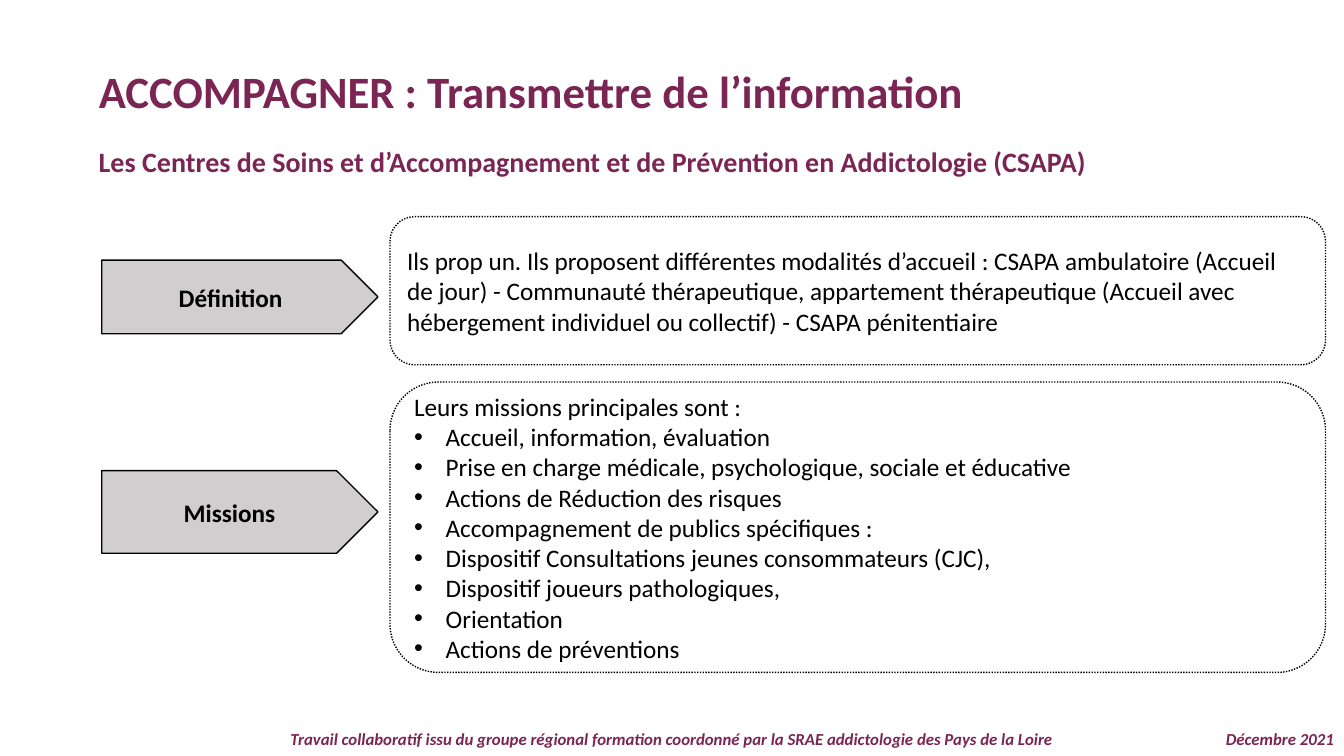
from lxml.etree import SubElement
from pptx import Presentation
from pptx.dml.color import RGBColor
from pptx.enum.dml import MSO_LINE
from pptx.enum.shapes import MSO_SHAPE
from pptx.enum.text import MSO_ANCHOR, PP_ALIGN
from pptx.oxml.ns import qn
from pptx.util import Pt

# Content
COLORS = {"plum": "7A2553", "grey": "D0CECE", "black": "000000"}
TITLE = "ACCOMPAGNER : Transmettre de l’information"
SUBTITLE = "Les Centres de Soins et d’Accompagnement et de Prévention en Addictologie (CSAPA)"
CREDIT = ("Travail collaboratif issu du groupe régional formation coordonné "
          "par la SRAE addictologie des Pays de la Loire")
DATE = "Décembre 2021"
# Each section: label, label top and height, panel top and height, intro, bullets
SECTIONS = [
    ("Définition", 185.8, 52.6, 154.8, 105.8,
     "Ils prop un. Ils proposent différentes modalités d’accueil : CSAPA ambulatoire "
     "(Accueil de jour) - Communauté thérapeutique, appartement thérapeutique (Accueil "
     "avec hébergement individuel ou collectif) - CSAPA pénitentiaire", []),
    ("Missions", 336.2, 59, 272.9, 207.4,
     "Leurs missions principales sont :",
     ["Accueil, information, évaluation",
      "Prise en charge médicale, psychologique, sociale et éducative",
      "Actions de Réduction des risques",
      "Accompagnement de publics spécifiques :",
      "Dispositif Consultations jeunes consommateurs (CJC),",
      "Dispositif joueurs pathologiques,",
      "Orientation",
      "Actions de préventions"]),
]

# Layout
WIDTH, HEIGHT = 960, 540
MARGIN = 63.4
LABEL_LEFT, LABEL_WIDTH = 72.7, 197.3
PANEL_LEFT, PANEL_WIDTH = 278.6, 668.2
FOOTER_TOP, FOOTER_HEIGHT = 518.4, 21.6
BULLET_INDENT = 22.5


def color(name):
    return RGBColor.from_string(COLORS[name])


def add_span(para, text, size, tint="black", bold=False, italic=False):
    span = para.add_run()
    span.text = text
    font = span.font
    font.name, font.size, font.bold, font.italic = "Calibri", Pt(size), bold, italic
    font.color.rgb = color(tint)


def add_bullet(para):
    properties = para._p.get_or_add_pPr()
    properties.set("marL", str(Pt(BULLET_INDENT)))
    properties.set("indent", str(-Pt(BULLET_INDENT)))
    SubElement(properties, qn("a:buFont")).set("typeface", "Arial")
    SubElement(properties, qn("a:buChar")).set("char", "•")


def add_heading(page, text, left, top, width, height, size, align, italic=False):
    box = page.shapes.add_textbox(Pt(left), Pt(top), Pt(width), Pt(height))
    box.text_frame.word_wrap = True
    para = box.text_frame.paragraphs[0]
    para.alignment = align
    add_span(para, text, size, "plum", True, italic)
    return para


def add_box(page, kind, left, top, width, height, align):
    box = page.shapes.add_shape(kind, Pt(left), Pt(top), Pt(width), Pt(height))
    box.shadow.inherit = False
    box.line.color.rgb = color("black")
    box.line.width = Pt(1)
    frame = box.text_frame
    frame.word_wrap = True
    frame.vertical_anchor = MSO_ANCHOR.MIDDLE
    frame.paragraphs[0].alignment = align
    return box


deck = Presentation()
deck.slide_width, deck.slide_height = Pt(WIDTH), Pt(HEIGHT)
page = deck.slides.add_slide(deck.slide_layouts[5])

# Footer
for text, left, width, align in [(CREDIT, 0, WIDTH, PP_ALIGN.CENTER),
                                 (DATE, 840, WIDTH - 840, PP_ALIGN.RIGHT)]:
    para = add_heading(page, text, left, FOOTER_TOP, width, FOOTER_HEIGHT, 12, align, True)
    para.line_spacing = 0.9

# Title and subtitle
title = page.shapes.title
title.left, title.top, title.width, title.height = Pt(MARGIN), Pt(41.8), Pt(714.2), Pt(46.1)
title.text_frame.word_wrap = True
title.text_frame.vertical_anchor = MSO_ANCHOR.TOP
title_para = title.text_frame.paragraphs[0]
title_para.alignment = PP_ALIGN.LEFT
add_span(title_para, TITLE, 32, "plum", True)
add_heading(page, SUBTITLE, MARGIN, 99.4, 882.7, 31.7, 20, PP_ALIGN.LEFT)

# Arrow labels and dotted panels
for name, label_top, label_height, panel_top, panel_height, intro, bullets in SECTIONS:
    label = add_box(page, MSO_SHAPE.PENTAGON, LABEL_LEFT, label_top,
                    LABEL_WIDTH, label_height, PP_ALIGN.CENTER)
    label.fill.solid()
    label.fill.fore_color.rgb = color("grey")
    add_span(label.text_frame.paragraphs[0], name, 18, bold=True)

    panel = add_box(page, MSO_SHAPE.ROUNDED_RECTANGLE, PANEL_LEFT, panel_top,
                    PANEL_WIDTH, panel_height, PP_ALIGN.LEFT)
    panel.fill.background()
    panel.line.dash_style = MSO_LINE.ROUND_DOT
    add_span(panel.text_frame.paragraphs[0], intro, 18)
    for text in bullets:
        para = panel.text_frame.add_paragraph()
        para.alignment = PP_ALIGN.LEFT
        add_bullet(para)
        add_span(para, text, 18)

deck.save("out.pptx")
